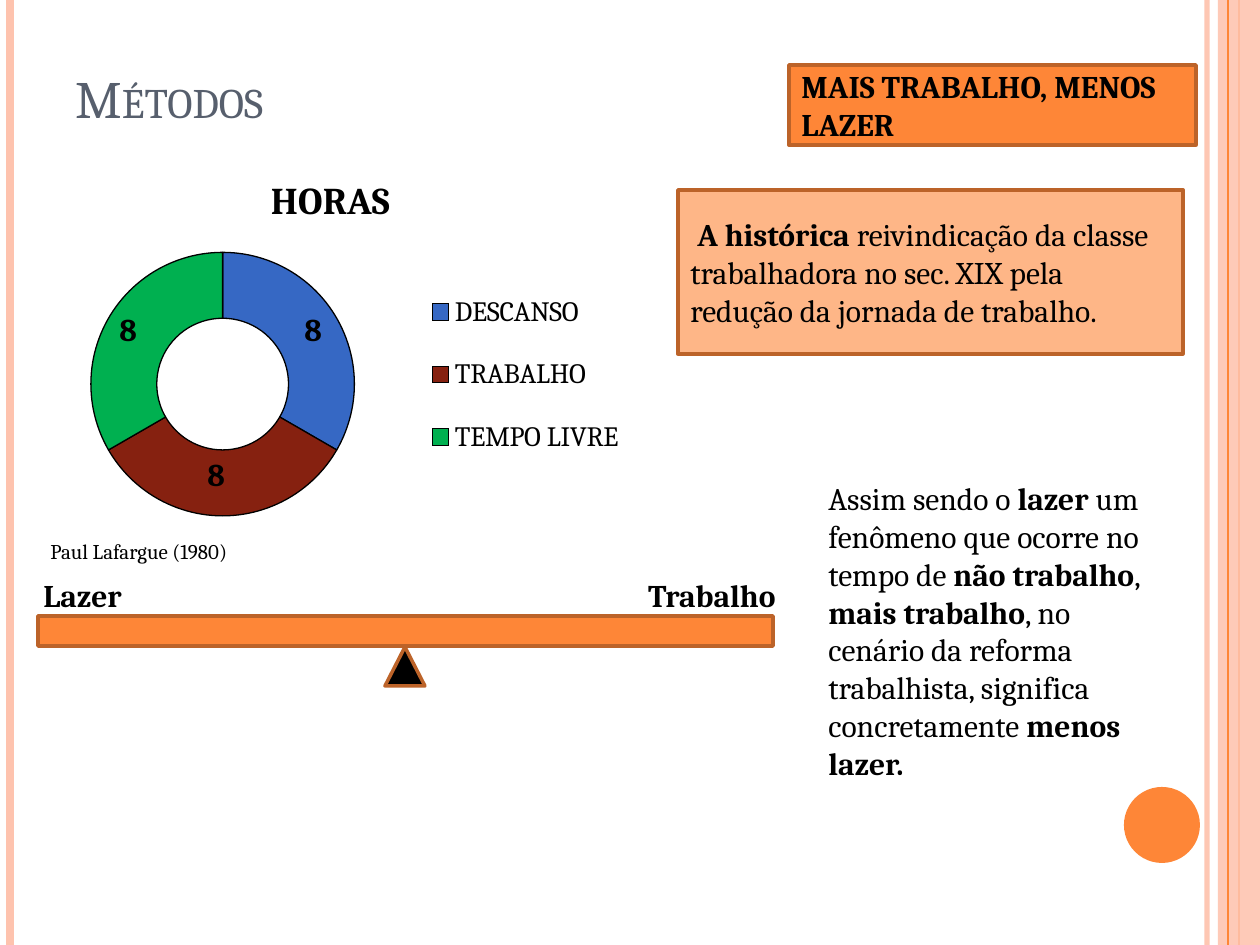
from lxml.etree import SubElement
from pptx import Presentation
from pptx.chart.data import CategoryChartData
from pptx.dml.color import RGBColor
from pptx.enum.chart import XL_CHART_TYPE as Chart, XL_LEGEND_POSITION as Legend
from pptx.enum.shapes import MSO_CONNECTOR as Connector, MSO_SHAPE as Shape
from pptx.enum.text import MSO_ANCHOR as Anchor, PP_ALIGN as Align
from pptx.oxml.ns import qn
from pptx.util import Pt

FONT = "Cambria"
COLORS = {
    "orange": "FE8637", "peach": "FEB687", "pink": "FEC3AE", "rust": "BC6329",
    "slate": "575F6D", "black": "000000",
    "blue": "3668C4", "red": "862110", "green": "00B050",
}
WIDTH, HEIGHT = 1260, 945
SCALE = 914400 / 126

STRIPES = [
    (1207, "pink", 3, 93),
    (10, "pink", 4.5, 100),
    (1239, "orange", 1.5, 100),
]
EDGE_LINE = (1228, "orange", 0.75, 100)
HOURS = [("DESCANSO", 33, "blue"), ("TRABALHO", 33, "red"), ("TEMPO LIVRE", 33, "green")]
PLOT_AREA = {"x": 0.1, "y": 0.25, "w": 0.44, "h": 0.7}
LEGEND_AREA = {"x": 0.66, "y": 0.29, "w": 0.34, "h": 0.57}

PANELS = [
    ((789, 65, 407, 80), "orange", "**MAIS TRABALHO, MENOS LAZER**"),
    ((678, 190, 505, 164), "peach",
     "** A histórica **reivindicação da classe trabalhadora no sec. XIX pela "
     "redução da jornada de trabalho."),
]
CONCLUSION = (
    "Assim sendo o **lazer** um fenômeno que ocorre no tempo de **não trabalho**, "
    "**mais trabalho**, no cenário da reforma trabalhista, significa "
    "concretamente **menos lazer.**"
)
TEXTS = [
    ((63, 38, 1029, 97), "Métodos",
     dict(size=30, color="slate", anchor=Anchor.BOTTOM, small_caps=True)),
    ((38, 532, 315, 38), "Paul Lafargue (1980)", dict(size=12)),
    ((816, 473, 365, 357), CONCLUSION, {}),
    ((31, 570, 120, 50), "**Lazer**", dict(wrap=False)),
    ((612, 570, 176, 50), "**Trabalho**", dict(wrap=False, align=Align.RIGHT)),
]
SLICE_LABELS = [(292, 304), (195, 449), (107, 304)]


def px(*lengths):
    return [round(length * SCALE) for length in lengths]


def rgb(name):
    return RGBColor.from_string(COLORS[name])


def set_alpha(fill_parent, percent):
    color = next(fill_parent.iter(qn("a:srgbClr")))
    SubElement(color, qn("a:alpha")).set("val", str(percent * 1000))


def write(shape, text, size=18, color="black", align=Align.LEFT, anchor=Anchor.TOP,
          wrap=True, small_caps=False):
    frame = shape.text_frame
    frame.word_wrap = wrap
    frame.vertical_anchor = anchor
    para = frame.paragraphs[0]
    para.alignment = align
    for index, part in enumerate(text.split("**")):
        if not part:
            continue
        span = para.add_run()
        span.text = part
        span.font.name = FONT
        span.font.size = Pt(size)
        span.font.bold = index % 2 == 1
        span.font.color.rgb = rgb(color)
        if small_caps:
            span.font._element.set("cap", "small")


def add_text(page, place, text, **style):
    box = page.shapes.add_textbox(*px(*place))
    write(box, text, **style)


def add_figure(page, kind, place, fill, line=None):
    shape = page.shapes.add_shape(kind, *px(*place))
    shape.shadow.inherit = False
    shape.fill.solid()
    shape.fill.fore_color.rgb = rgb(fill)
    if line:
        shape.line.color.rgb = rgb(line)
        shape.line.width = Pt(2)
    else:
        shape.line.fill.background()
    return shape


def add_stripe(page, x, color, width, alpha):
    stripe = page.shapes.add_connector(Connector.STRAIGHT, *px(x, 0, x, HEIGHT))
    stripe.line.color.rgb = rgb(color)
    stripe.line.width = Pt(width)
    properties = stripe._element.spPr
    if alpha < 100:
        set_alpha(properties, alpha)
    SubElement(properties, qn("a:effectLst"))


def set_layout(parent, position, area, inner=False):
    old = parent.find(qn("c:layout"))
    if old is not None:
        parent.remove(old)
    layout = SubElement(parent, qn("c:layout"))
    parent.insert(position, layout)
    manual = SubElement(layout, qn("c:manualLayout"))
    if inner:
        SubElement(manual, qn("c:layoutTarget")).set("val", "inner")
    for axis in "xy":
        SubElement(manual, qn(f"c:{axis}Mode")).set("val", "edge")
    for key, value in area.items():
        SubElement(manual, qn(f"c:{key}")).set("val", str(value))


def add_hours_chart(page):
    data = CategoryChartData()
    data.categories = [name for name, _, _ in HOURS]
    data.add_series("Series 1", [value for _, value, _ in HOURS])
    chart = page.shapes.add_chart(Chart.DOUGHNUT, *px(31, 155, 599, 382), data).chart
    chart.font.name = FONT
    chart.font.size = Pt(18)
    chart.font.color.rgb = rgb("black")
    chart.has_title = True
    title = chart.chart_title.text_frame
    title.text = "HORAS"
    font = title.paragraphs[0].runs[0].font
    font.name, font.size, font.bold = FONT, Pt(21.6), True
    font.color.rgb = rgb("black")
    chart.has_legend = True
    legend = chart.legend
    legend.position = Legend.RIGHT
    legend.include_in_layout = False
    legend.font.name = FONT
    legend.font.size = Pt(16)
    legend.font.color.rgb = rgb("black")
    plot = chart.plots[0]
    plot.vary_by_categories = True
    for index, (_, _, color) in enumerate(HOURS):
        look = plot.series[0].points[index].format
        look.fill.solid()
        look.fill.fore_color.rgb = rgb(color)
        look.line.color.rgb = rgb("black")
        look.line.width = Pt(0.75)
    area = next(chart._chartSpace.iter(qn("c:plotArea")))
    set_layout(area, 0, PLOT_AREA, inner=True)
    set_layout(legend._element, 1, LEGEND_AREA)


def main():
    deck = Presentation()
    deck.slide_width, deck.slide_height = px(WIDTH, HEIGHT)
    page = deck.slides.add_slide(deck.slide_layouts[6])

    for stripe in STRIPES:
        add_stripe(page, *stripe)
    band = add_figure(page, Shape.RECTANGLE, (1218, 0, 42, HEIGHT), "pink")
    set_alpha(band._element.spPr, 87)
    add_stripe(page, *EDGE_LINE)
    add_figure(page, Shape.OVAL, (1124, 787, 76, 76), "orange")

    for place, fill, text in PANELS:
        panel = add_figure(page, Shape.RECTANGLE, place, fill, "rust")
        write(panel, text, anchor=Anchor.MIDDLE)
    add_figure(page, Shape.ISOSCELES_TRIANGLE, (385, 647, 40, 39), "black", "rust")
    add_figure(page, Shape.RECTANGLE, (38, 616, 735, 30), "orange", "rust")
    for place, text, style in TEXTS:
        add_text(page, place, text, **style)

    add_hours_chart(page)
    for left, top in SLICE_LABELS:
        add_text(page, (left, top, 44, 50), "**8**", wrap=False)

    deck.save("out.pptx")


if __name__ == "__main__":
    main()
